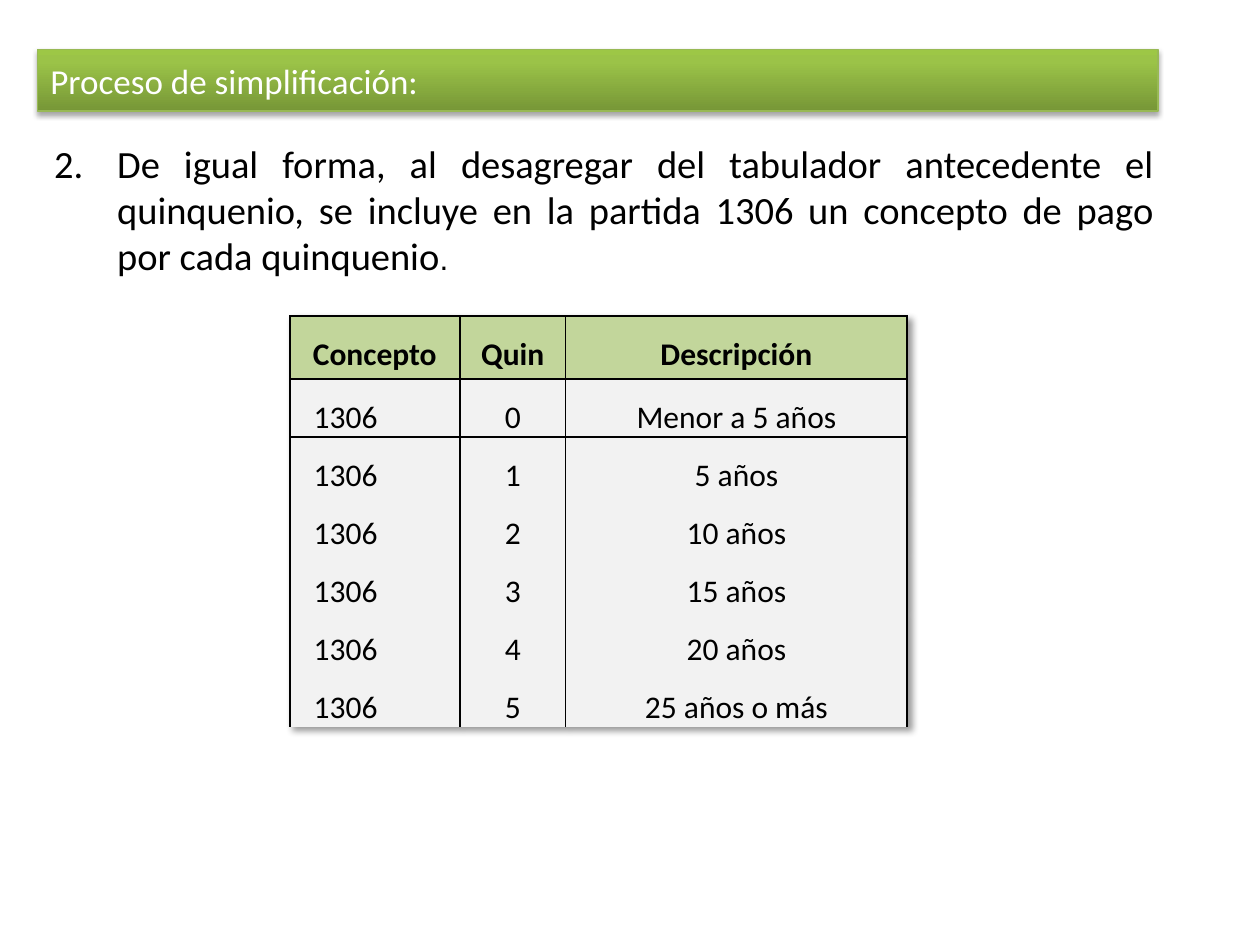
"""Build the slide on simplifying the pay scale, with its table of five-year steps."""
from lxml import etree
from pptx import Presentation
from pptx.dml.color import RGBColor
from pptx.enum.text import MSO_ANCHOR, MSO_AUTO_SIZE, PP_ALIGN
from pptx.oxml.ns import qn
from pptx.util import Inches, Pt

LEFT, CENTER, JUSTIFY = PP_ALIGN.LEFT, PP_ALIGN.CENTER, PP_ALIGN.JUSTIFY
TOP, MIDDLE = MSO_ANCHOR.TOP, MSO_ANCHOR.MIDDLE

TITLE = "Proceso de simplificación:"
BODY = [
    ("De igual forma, al desagregar del tabulador antecedente el quinquenio, "
     "se incluye en la partida 1306 un concepto de pago por cada quinquenio", 22, "Calibri"),
    (".", 18, "Arial"),
]
HEADERS = ("Concepto", "Quin", "Descripción")
TERMS = ("Menor a 5 años", "5 años", "10 años", "15 años", "20 años", "25 años o más")
ROWS = [HEADERS] + [("1306", str(i), term) for i, term in enumerate(TERMS)]

COLORS = {"text": "000000", "title": "FFFFFF", "edge": "98B955", "header": "C2D69B", "row": "F2F2F2"}
GRADIENT = ((0, "779737"), (80, "9BC348"), (100, "9DC746"))
TITLE_BOX = (0.3, 0.39, 8.89, 0.49)
BODY_BOX = (0.33, 1.06, 8.93, 1.2)
TABLE_AT = (2.3, 2.51)
COLS = (1.35, 0.84, 2.71)
HEADER_H, ROW_H = 0.5, 0.46
NO_STYLE = "{2D5ABB26-0587-4C30-8999-92F81FD0307C}"


def rgb(name):
    return RGBColor.from_string(COLORS[name])


def add(parent, tag, **attrs):
    return etree.SubElement(parent, qn(tag), {k: str(v) for k, v in attrs.items()})


def add_shadow(parent, blur, dist, angle, alpha):
    effects = add(parent, "a:effectLst")
    shadow = add(effects, "a:outerShdw", blurRad=Pt(blur), dist=Pt(dist),
                 dir=angle * 60000, algn="tl", rotWithShape=0)
    color = add(shadow, "a:srgbClr", val=COLORS["text"])
    add(color, "a:alpha", val=alpha * 1000)
    return effects


def add_run(p, text, size, color="text", font="Calibri", bold=False):
    r = p.add_run()
    r.text = text
    r.font.color.rgb = rgb(color)
    for key, value in {"size": Pt(size), "name": font, "bold": bold}.items():
        setattr(r.font, key, value)


def place(sp, box, anchor):
    for key, value in zip(("left", "top", "width", "height"), box):
        setattr(sp, key, Inches(value))
    tf = sp.text_frame
    for key, value in {"auto_size": MSO_AUTO_SIZE.NONE, "word_wrap": True,
                       "vertical_anchor": anchor}.items():
        setattr(tf, key, value)
    p = tf.paragraphs[0]
    p.space_before = Pt(0)
    return p


def add_title(slide):
    sp = slide.shapes.title
    p = place(sp, TITLE_BOX, MIDDLE)
    p.alignment = LEFT
    add_run(p, TITLE, 20, "title")
    props = sp.element.spPr
    grad = add(props, "a:gradFill", rotWithShape=1)
    stops = add(grad, "a:gsLst")
    for pos, color in GRADIENT:
        add(add(stops, "a:gs", pos=pos * 1000), "a:srgbClr", val=color)
    add(grad, "a:lin", ang=270 * 60000, scaled=0)
    sp.line.color.rgb = rgb("edge")
    sp.line.width = Pt(0.75)
    add_shadow(props, 3.1, 1.8, 90, 35)


def add_body(slide):
    p = place(slide.placeholders[1], BODY_BOX, TOP)
    p.alignment = JUSTIFY
    props = p._p.get_or_add_pPr()
    props.set("marL", str(Inches(0.5)))
    props.set("indent", str(Inches(-0.5)))
    add(props, "a:buFont", typeface="Calibri")
    add(props, "a:buAutoNum", type="arabicPeriod", startAt=2)
    for text, size, font in BODY:
        add_run(p, text, size, font=font)


def format_cell(cell, text, row, col):
    for key, value in {"margin_left": Inches(0.07), "margin_right": Inches(0.07),
                       "margin_top": 0, "margin_bottom": 0, "vertical_anchor": TOP}.items():
        setattr(cell, key, value)
    header = row == 0
    p = cell.text_frame.paragraphs[0]
    p.line_spacing = 1.5
    p.alignment = CENTER
    if not header and col == 0:
        p.alignment = LEFT
        p._p.get_or_add_pPr().set("marL", str(Inches(0.12)))
    add_run(p, text, 18, bold=header)
    borders = {"a:lnL": 1, "a:lnR": 1.5 if col == len(COLS) - 1 else 1}
    if header:
        borders["a:lnT"] = borders["a:lnB"] = 1
    elif row == 1:
        borders["a:lnT"] = 1
    for tag, width in borders.items():
        ln = add(cell._tc.get_or_add_tcPr(), tag, w=Pt(width))
        add(add(ln, "a:solidFill"), "a:srgbClr", val=COLORS["text"])
    cell.fill.solid()
    cell.fill.fore_color.rgb = rgb("header" if header else "row")


def add_terms_table(slide):
    heights = [HEADER_H] + [ROW_H] * len(TERMS)
    box = (*TABLE_AT, sum(COLS), sum(heights))
    table = slide.shapes.add_table(len(ROWS), len(COLS), *map(Inches, box)).table
    table.first_row = table.horz_banding = False
    props = table._tbl.tblPr
    props.find(qn("a:tableStyleId")).text = NO_STYLE
    props.insert(0, add_shadow(props, 4, 3, 45, 40))
    for column, width in zip(table.columns, COLS):
        column.width = Inches(width)
    for i, (row, height) in enumerate(zip(table.rows, heights)):
        row.height = Inches(height)
        for j, text in enumerate(ROWS[i]):
            format_cell(table.cell(i, j), text, i, j)


def main():
    prs = Presentation()
    prs.slide_width, prs.slide_height = Inches(10), Inches(7.5)
    slide = prs.slides.add_slide(prs.slide_layouts[1])
    add_title(slide)
    add_body(slide)
    add_terms_table(slide)
    prs.save("out.pptx")


if __name__ == "__main__":
    main()
